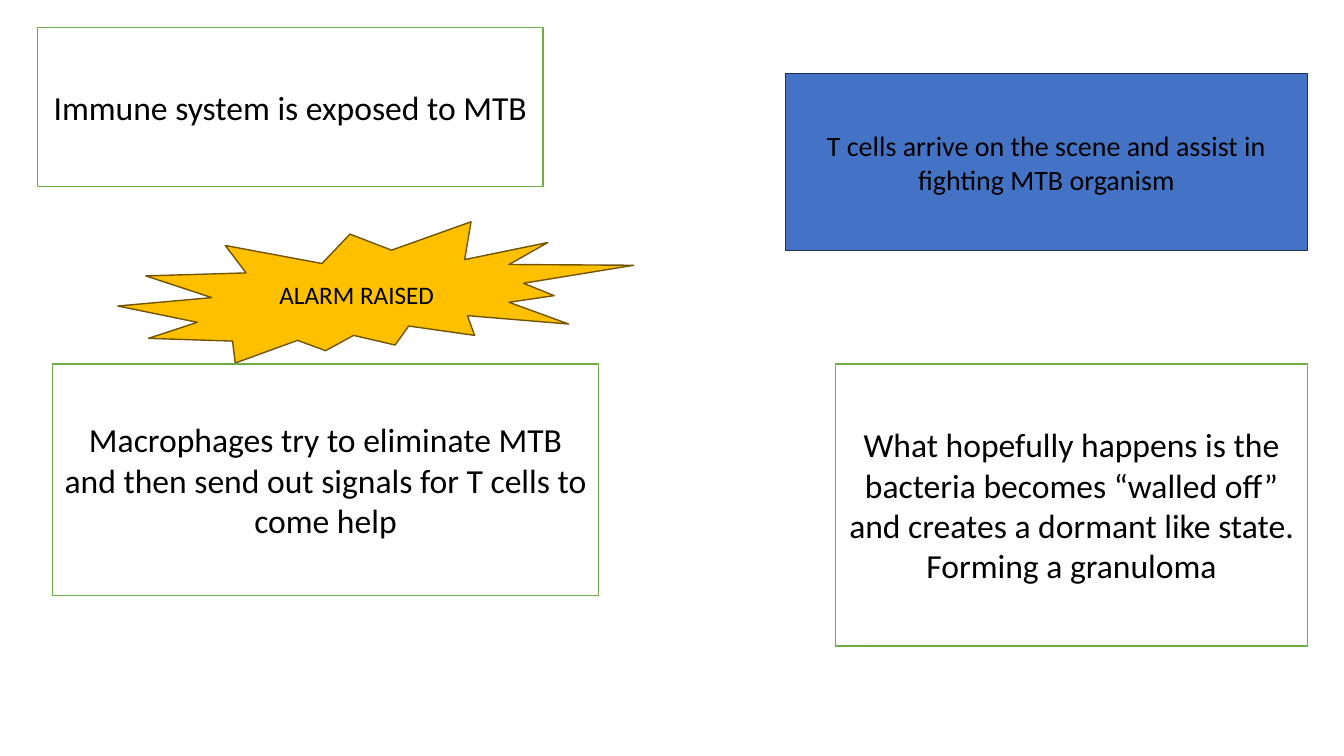
from pptx import Presentation
from pptx.dml.color import RGBColor
from pptx.enum.shapes import MSO_SHAPE
from pptx.enum.text import MSO_ANCHOR, PP_ALIGN
from pptx.util import Cm, Pt

RECTANGLE = MSO_SHAPE.RECTANGLE
EXPLOSION = MSO_SHAPE.EXPLOSION2
MIDDLE = MSO_ANCHOR.MIDDLE
CENTER = PP_ALIGN.CENTER

COLORS = {
    "white": "FFFFFF",
    "black": "000000",
    "green": "70AD47",
    "blue": "4472C4",
    "navy": "1E3256",
    "amber": "FFC000",
    "brown": "705400",
}


def color(name):
    return RGBColor.from_string(COLORS[name])


def write_text(shape, text, size=24, font="Calibri", ink="black"):
    frame = shape.text_frame
    frame.word_wrap = True
    frame.vertical_anchor = MIDDLE
    paragraph = frame.paragraphs[0]
    paragraph.alignment = CENTER
    run = paragraph.add_run()
    run.text = text
    run.font.name = font
    run.font.size = Pt(size)
    run.font.color.rgb = color(ink)


class SlideBuilder:
    def __init__(self, slide, line_width=1):
        self.slide = slide
        self.line_width = Pt(line_width)

    def add_shape(self, kind, bounds, text, fill, line, size):
        """Draw a labelled shape; bounds are left, top, width, height in cm."""
        shape = self.slide.shapes.add_shape(kind, *map(Cm, bounds))
        shape.shadow.inherit = False
        shape.fill.solid()
        shape.fill.fore_color.rgb = color(fill)
        shape.line.color.rgb = color(line)
        shape.line.width = self.line_width
        write_text(shape, text, size=size)

    def add_box(self, bounds, text, fill="white", line="green", size=24):
        self.add_shape(RECTANGLE, bounds, text, fill, line, size)

    def add_burst(self, bounds, text):
        self.add_shape(EXPLOSION, bounds, text, "amber", "brown", 18)


def main():
    presentation = Presentation()
    presentation.slide_width = Cm(33.87)
    presentation.slide_height = Cm(19.05)
    slide = presentation.slides.add_slide(presentation.slide_layouts[6])
    builder = SlideBuilder(slide)

    lower_top = 9.17
    builder.add_box((0.94, 0.69, 12.75, 4.01), "Immune system is exposed to MTB")
    builder.add_box(
        (19.79, 1.85, 13.16, 4.47),
        "T cells arrive on the scene and assist in fighting MTB organism",
        fill="blue", line="navy", size=20,
    )
    builder.add_burst((2.97, 5.59, 13, 3.56), "ALARM RAISED")
    builder.add_box(
        (1.32, lower_top, 13.77, 5.84),
        "Macrophages try to eliminate MTB and then send out signals "
        "for T cells to come help",
    )
    builder.add_box(
        (21.06, lower_top, 11.89, 7.11),
        "What hopefully happens is the bacteria becomes “walled off” "
        "and creates a dormant like state. Forming a granuloma",
    )
    presentation.save("out.pptx")


if __name__ == "__main__":
    main()
